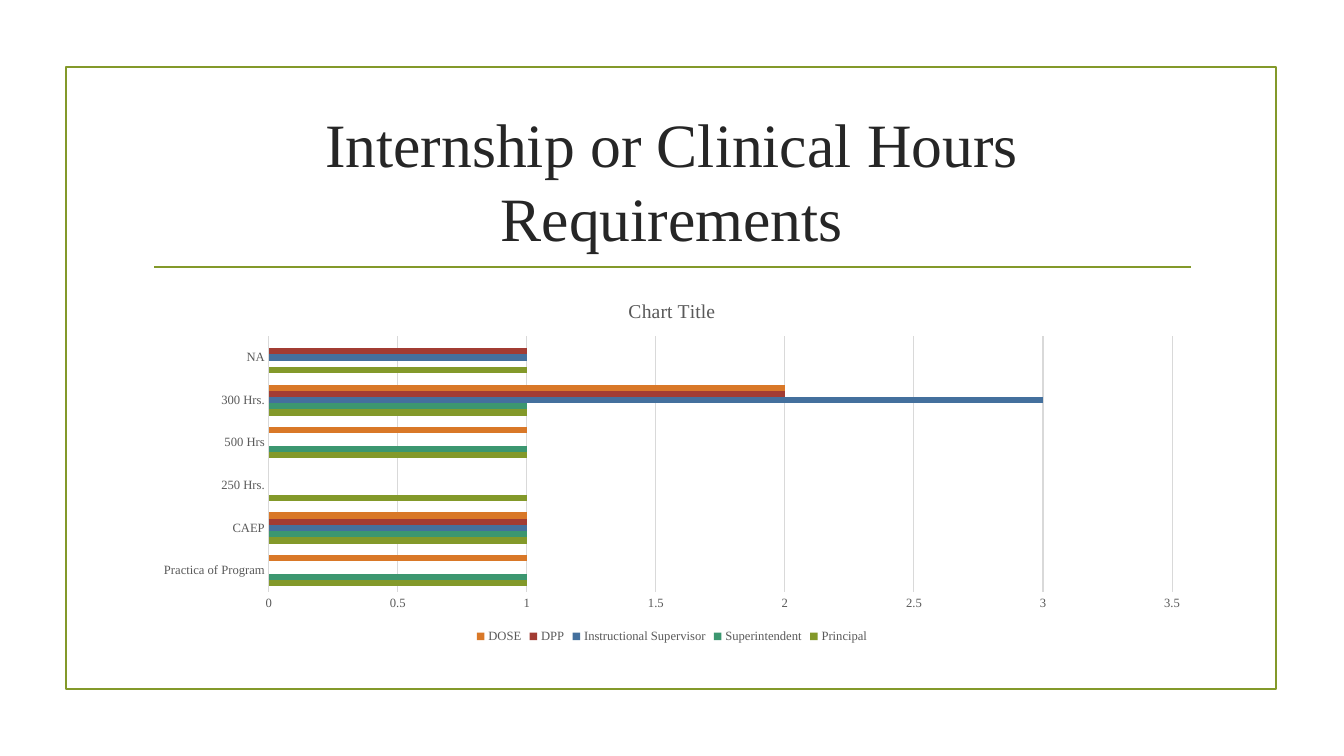
from dataclasses import dataclass

from lxml.etree import SubElement
from pptx import Presentation
from pptx.chart.data import CategoryChartData
from pptx.dml.color import RGBColor
from pptx.enum.chart import XL_CHART_TYPE as ChartType
from pptx.enum.chart import XL_LEGEND_POSITION as LegendPosition
from pptx.enum.chart import XL_TICK_MARK as TickMark
from pptx.enum.shapes import MSO_CONNECTOR as Connector
from pptx.enum.shapes import MSO_SHAPE as Shape
from pptx.enum.text import MSO_ANCHOR as Anchor
from pptx.enum.text import MSO_AUTO_SIZE as AutoSize
from pptx.enum.text import PP_ALIGN as Align
from pptx.oxml.ns import qn
from pptx.util import Emu, Pt

EMU_PER_PX = 9525
FONT = "Times New Roman"
OLIVE = "83992A"
INK = "262626"
GREY = "595959"
GRID = "D9D9D9"


@dataclass(frozen=True)
class Role:
    name: str
    hours: tuple
    colour: str


REQUIREMENTS = ("Practica of Program", "CAEP", "250 Hrs.", "500 Hrs", "300 Hrs.", "NA")
ROLES = (
    Role("Principal", (1, 1, 1, 1, 1, 1), OLIVE),
    Role("Superintendent", (1, 1, None, 1, 1, None), "3C9770"),
    Role("Instructional Supervisor", (None, 1, None, None, 3, 1), "44709D"),
    Role("DPP", (None, 1, None, None, 2, 1), "A23C33"),
    Role("DOSE", (1, 1, None, 1, 2, None), "D97828"),
)


def px(length: int) -> Emu:
    return Emu(length * EMU_PER_PX)


def rgb(colour: str) -> RGBColor:
    return RGBColor.from_string(colour)


def style_font(font, size: int, colour: str) -> None:
    font.name = FONT
    font.size = Pt(size)
    font.bold = False
    font.color.rgb = rgb(colour)


def style_line(line, colour: str, width: float) -> None:
    line.color.rgb = rgb(colour)
    line.width = Pt(width)


def draw_frame(slide) -> None:
    frame = slide.shapes.add_shape(Shape.RECTANGLE, px(63), px(64), px(1152), px(592))
    frame.shadow.inherit = False
    frame.fill.background()
    style_line(frame.line, OLIVE, 1.25)
    rule = slide.shapes.add_connector(
        Connector.STRAIGHT, px(147), px(254), px(1134), px(254)
    )
    style_line(rule.line, OLIVE, 1.25)
    SubElement(rule._element.spPr, qn("a:effectLst"))


def write_title(slide, wording: str) -> None:
    title = slide.shapes.title
    slide.shapes._spTree.append(title._element)
    title.left, title.top, title.width, title.height = px(136), px(103), px(1008), px(137)
    frame = title.text_frame
    frame.text = wording
    frame.word_wrap = True
    frame.auto_size = AutoSize.NONE
    frame.vertical_anchor = Anchor.MIDDLE
    heading = frame.paragraphs[0]
    heading.alignment = Align.CENTER
    style_font(heading.runs[0].font, 44, INK)


def draw_hours_chart(slide) -> None:
    data = CategoryChartData()
    data.categories = REQUIREMENTS
    for role in ROLES:
        data.add_series(role.name, role.hours)
    chart = slide.shapes.add_chart(
        ChartType.BAR_CLUSTERED, px(136), px(269), px(1008), px(348), data
    ).chart
    style_font(chart.font, 10, "000000")

    chart.has_title = True
    caption = chart.chart_title.text_frame
    caption.text = "Chart Title"
    style_font(caption.paragraphs[0].runs[0].font, 14, GREY)
    chart.chart_title.include_in_layout = False

    chart.has_legend = True
    chart.legend.position = LegendPosition.BOTTOM
    chart.legend.include_in_layout = False
    style_font(chart.legend.font, 9, GREY)

    for axis in (chart.category_axis, chart.value_axis):
        axis.major_tick_mark = TickMark.NONE
        axis.minor_tick_mark = TickMark.NONE
        style_font(axis.tick_labels.font, 9, GREY)
    style_line(chart.category_axis.format.line, GRID, 0.75)

    hours = chart.value_axis
    hours.minimum_scale, hours.maximum_scale, hours.major_unit = 0, 3.5, 0.5
    hours.format.line.fill.background()
    hours.has_major_gridlines = True
    style_line(hours.major_gridlines.format.line, GRID, 0.75)

    bars = chart.plots[0]
    bars.vary_by_categories = False
    bars.gap_width = 182
    for series, role in zip(bars.series, ROLES):
        series.format.fill.solid()
        series.format.fill.fore_color.rgb = rgb(role.colour)


def main() -> None:
    deck = Presentation()
    deck.slide_width, deck.slide_height = px(1280), px(720)
    slide = deck.slides.add_slide(deck.slide_layouts[5])
    draw_frame(slide)
    write_title(slide, "Internship or Clinical Hours Requirements")
    draw_hours_chart(slide)
    deck.save("out.pptx")


if __name__ == "__main__":
    main()
